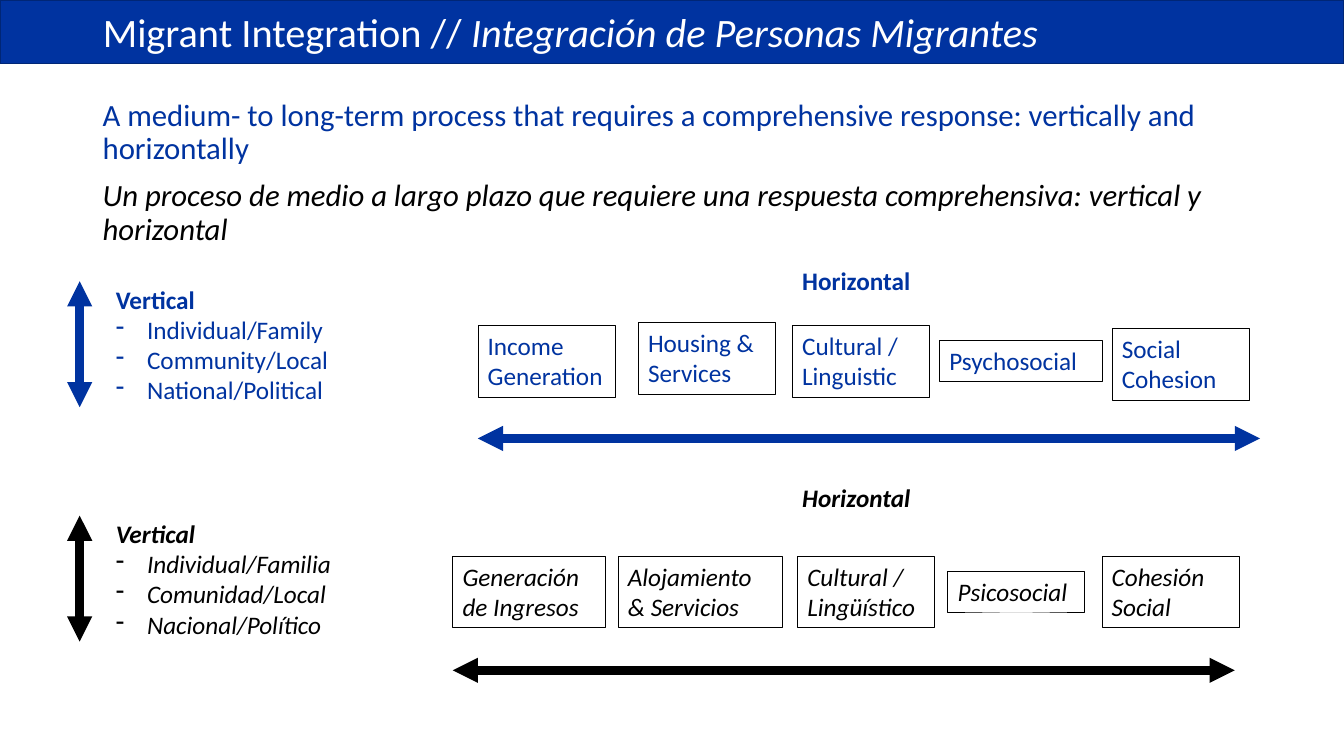
from lxml import etree
from pptx import Presentation
from pptx.dml.color import RGBColor
from pptx.enum.shapes import MSO_CONNECTOR as CONNECTOR, MSO_SHAPE as SHAPE
from pptx.enum.text import MSO_ANCHOR as ANCHOR, MSO_AUTO_SIZE as FIT, PP_ALIGN as ALIGN
from pptx.oxml.ns import qn
from pptx.util import Inches, Pt

COLORS = {"blue": "0033A0", "navy": "002676", "black": "000000", "white": "FFFFFF"}
FONT = "Calibri"
WIDTH, HEIGHT = Inches(13.33), Inches(7.5)
LINE_ROWS, TWO_LINE_ROWS = 5.33, 9.47  # heights of one- and two-line boxes
CARD_COLS = 10.2


# The slide is a grid of 100 columns by 100 rows
def grid(left, top, width, height):
    return (int(WIDTH * left / 100), int(HEIGHT * top / 100),
            int(WIDTH * width / 100), int(HEIGHT * height / 100))


def rgb(name):
    return RGBColor.from_string(COLORS[name])


def style(paragraph, size, color, bold=False, italic=None):
    paragraph.alignment = ALIGN.LEFT
    font = paragraph.font
    font.name, font.size, font.bold, font.italic = FONT, Pt(size), bold, italic
    font.color.rgb = rgb(color)


def add_dash(paragraph):
    properties = paragraph._p.get_or_add_pPr()
    properties.set("marL", str(Inches(0.31)))
    properties.set("indent", str(-Inches(0.31)))
    etree.SubElement(properties, qn("a:buChar"), char="-")


def add_text(slide, box, lines):
    frame = slide.shapes.add_textbox(*grid(*box)).text_frame
    frame.word_wrap = True
    frame.text = "\n".join(lines)
    return frame.paragraphs


def add_double_arrow(slide, start, end, color):
    x1, y1, x2, y2 = grid(*start, *end)
    arrow = slide.shapes.add_connector(CONNECTOR.STRAIGHT, x1, y1, x2, y2)
    arrow.line.color.rgb = rgb(color)
    arrow.line.width = Pt(6)
    line = arrow.line._get_or_add_ln()
    for end_tag in ("a:headEnd", "a:tailEnd"):
        etree.SubElement(line, qn(end_tag), type="triangle")
    etree.SubElement(arrow._element.spPr, qn("a:effectLst"))


# Banner with the bilingual title
def add_header(slide, box, english, spanish):
    banner = slide.shapes.add_shape(SHAPE.RECTANGLE, *grid(*box))
    banner.shadow.inherit = False
    banner.fill.solid()
    banner.fill.fore_color.rgb = rgb("blue")
    banner.line.color.rgb = rgb("navy")
    banner.line.width = Pt(1)
    slide.shapes._spTree.insert(2, banner._element)  # behind the title

    left, top, width, height = box
    title = slide.shapes.title
    title.left, title.top, title.width, title.height = grid(
        left + 6.9, top + height * 0.27, width * 0.86, height * 0.56)
    frame = title.text_frame
    frame.auto_size, frame.vertical_anchor = FIT.NONE, ANCHOR.MIDDLE
    paragraph = frame.paragraphs[0]
    paragraph.add_run().text = english
    translation = paragraph.add_run()
    translation.text = spanish
    translation.font.italic = True
    style(paragraph, 28.8, "white")
    paragraph.line_spacing = 0.9


# Definition in both languages
def add_definition(slide, box, english, spanish):
    first, second = add_text(slide, box, [english, spanish])
    style(first, 22, "blue")
    style(second, 22, "black", italic=True)
    first.line_spacing = second.line_spacing = 0.9
    second.space_before = Pt(10)


# Vertical arrow with its list of levels
def add_levels(slide, box, heading, levels, color, italic):
    left, top, width, height = box
    text_box = (left + 1.95, top - 0.3, width - 1.95, height + 0.8)
    paragraphs = add_text(slide, text_box, [heading, *levels])
    for level in paragraphs[1:]:
        add_dash(level)
    for index, paragraph in enumerate(paragraphs):
        style(paragraph, 18, color, bold=index == 0, italic=italic)
    add_double_arrow(slide, (left, top + height), (left, top), color)


def add_card(slide, box, text, color, italic):
    card = slide.shapes.add_shape(SHAPE.RECTANGLE, *grid(*box))
    card.shadow.inherit = False
    card.fill.background()
    card.line.color.rgb = rgb("black")
    card.line.width = Pt(0.25)
    frame = card.text_frame
    frame.word_wrap, frame.vertical_anchor = True, ANCHOR.TOP
    frame.text = text
    style(frame.paragraphs[0], 18, color, italic=italic)


# Heading, row of dimension cards and the horizontal arrow below
def add_dimensions(slide, box, heading, heading_left, cards, color, italic):
    left, top, width, height = box
    bottom = top + height
    label_box = (left + heading_left, top, CARD_COLS, LINE_ROWS)
    style(add_text(slide, label_box, [heading])[0], 18, color, True, italic)
    for text, offset, card_width, nudge in cards:
        card_height = TWO_LINE_ROWS if " " in text else LINE_ROWS
        card_top = bottom - 10.4 + nudge - card_height / 2
        add_card(slide, (left + offset, card_top, card_width, card_height),
                 text, color, italic)
    add_double_arrow(slide, (left, bottom), (left + width, bottom), color)


# Cards: text, column offset, width in columns, shift in rows
ENGLISH_CARDS = [
    ("Income Generation", 0, CARD_COLS, 0.2),
    ("Housing & Services", 11.93, CARD_COLS, -0.2),
    ("Cultural / Linguistic", 23.4, CARD_COLS, 0.2),
    ("Psychosocial", 34.35, 12.08, 0.1),
    ("Social Cohesion", 47.18, CARD_COLS, 0.6),
]
SPANISH_CARDS = [
    ("Generación de Ingresos", 0, 11.33, 0),
    ("Alojamiento & Servicios", 12.3, 12.23, 0),
    ("Cultural / Lingüístico", 25.65, CARD_COLS, 0),
    ("Psicosocial", 36.83, CARD_COLS, 0),
    ("Cohesión Social", 48.3, CARD_COLS, 0),
]


def main():
    deck = Presentation()
    deck.slide_width, deck.slide_height = WIDTH, HEIGHT
    slide = deck.slides.add_slide(deck.slide_layouts.get_by_name("Title Only"))

    add_header(slide, (0, 0, 100, 8.4), "Migrant Integration // ",
               "Integración de Personas Migrantes")
    add_definition(
        slide, (6.9, 12.53, 86.25, 21.07),
        "A medium- to long-term process that requires a comprehensive response: "
        "vertically and horizontally",
        "Un proceso de medio a largo plazo que requiere una respuesta comprehensiva: "
        "vertical y horizontal")

    add_levels(slide, (5.93, 37.2, 19.88, 16.67), "Vertical",
               ["Individual/Family", "Community/Local", "National/Political"],
               "blue", False)
    add_levels(slide, (5.93, 68.2, 22.2, 16.67), "Vertical",
               ["Individual/Familia", "Comunidad/Local", "Nacional/Político"],
               "black", True)
    add_dimensions(slide, (35.55, 34.4, 58.2, 23.6), "Horizontal", 23.4,
                   ENGLISH_CARDS, "blue", False)
    add_dimensions(slide, (33.68, 63.2, 58.2, 25.47), "Horizontal", 25.27,
                   SPANISH_CARDS, "black", True)
    deck.save("out.pptx")


if __name__ == "__main__":
    main()
